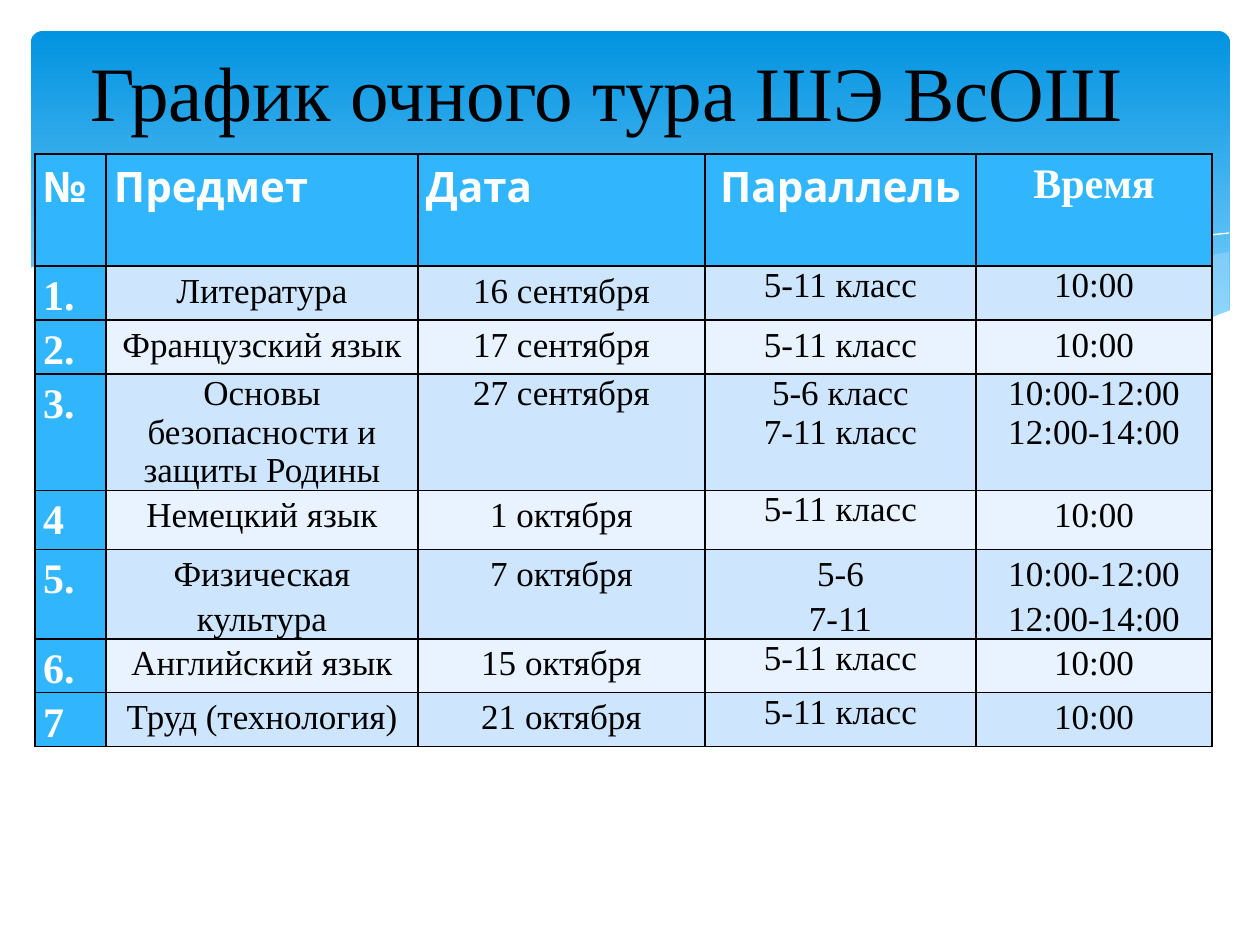
from lxml.etree import SubElement
from pptx import Presentation
from pptx.dml.color import RGBColor
from pptx.enum.dml import MSO_THEME_COLOR as THEME
from pptx.enum.shapes import MSO_SHAPE as SHAPE
from pptx.enum.text import MSO_ANCHOR as ANCHOR, MSO_AUTO_SIZE as AUTO_SIZE, PP_ALIGN as ALIGN
from pptx.oxml.ns import qn
from pptx.util import Emu, Pt

SCALE = 914400 / 126
COLORS = {
    "black": "000000", "white": "FFFFFF", "accent": "31B6FD",
    "odd": "CEE5FE", "even": "E8F3FF", "wave": "C6E7FC",
    "sky_top": "0293E0", "sky_bottom": "83D3FE",
}
SERIF, SANS = "Times New Roman", "Cabin"

RIGHT_WAVE = [(1200, 20), (1149, 29), (1056, 49), (920, 81), (804, 102), (877, 111),
              (983, 118), (1070, 113), (1140, 100), (1200, 79)]
LONG_WAVE = [(1096, 112), (1026, 102), (905, 79), (764, 48), (670, 26), (587, 13),
             (500, 4), (426, 1), (331, 9), (427, 24), (537, 48), (684, 81),
             (790, 101), (898, 115), (1002, 118)]
LONG_CREST = [(360, 14), (416, 6), (495, 4), (587, 8), (672, 16), (772, 30),
              (887, 53), (1018, 84), (1114, 111)]
RIGHT_CREST = [(743, 92), (847, 64), (949, 40), (1062, 19), (1135, 8), (1200, 1)]
FRONT_WAVE = [(0, 37), (16, 29), (55, 16), (105, 6), (155, 1), (214, 0), (286, 3),
              (369, 13), (464, 29), (534, 45), (638, 69), (731, 88), (838, 106),
              (930, 115), (1008, 117), (1074, 112), (1130, 102), (1168, 91),
              (1202, 78), (1202, 183), (0, 183)]

COLUMNS = [71, 312, 287, 271, 236]
ROW_HEIGHTS = [112, 54, 54, 112, 59, 54, 54, 54]
HEADER = ["№", "Предмет", "Дата", "Параллель", "Время"]
ALL_GRADES = "5-11 класс"
SPLIT_TIME = "10:00-12:00\n12:00-14:00"
# Each row ends with the columns that keep single line spacing.
SCHEDULE = [
    ("1.", "Литература", "16 сентября", ALL_GRADES, "10:00", {3, 4}),
    ("2.", "Французский язык", "17 сентября", ALL_GRADES, "10:00", set()),
    ("3.", "Основы безопасности и защиты Родины", "27 сентября",
     "5-6 класс\n7-11 класс", SPLIT_TIME, {1, 2, 3, 4}),
    ("4", "Немецкий язык", "1 октября", ALL_GRADES, "10:00", {3}),
    ("5.", "Физическая культура", "7 октября", "5-6\n7-11", SPLIT_TIME, set()),
    ("6.", "Английский язык", "15 октября", ALL_GRADES, "10:00", {3}),
    ("7", "Труд (технология)", "21 октября", ALL_GRADES, "10:00", {3}),
]


def px(length):
    return Emu(round(length * SCALE))


def rgb(name):
    return RGBColor.from_string(COLORS[name])


def set_all(target, values):
    for name, value in values.items():
        setattr(target, name, value)


def format_font(font, name, size, color, bold=False):
    set_all(font, {"name": name, "size": Pt(size), "bold": bold})
    font.color.rgb = rgb(color)


def add_curve(page, box, points, closed):
    builder = page.shapes.build_freeform(*points[0], scale=SCALE)
    builder.add_line_segments(points[1:], close=closed)
    curve = builder.convert_to_shape(px(box[0]), px(box[1]))
    curve.shadow.inherit = False
    return curve


def add_wave(page, box, points, color, opacity=100):
    wave = add_curve(page, box, points, True)
    wave.fill.solid()
    wave.fill.fore_color.rgb = rgb(color)
    wave.line.fill.background()
    if opacity < 100:
        tint = wave.fill._xPr.find(qn("a:solidFill"))[0]
        SubElement(tint, qn("a:alpha"), val=str(opacity * 1000))


def add_crest(page, box, points):
    crest = add_curve(page, box, points, False)
    crest.fill.background()
    crest.line.color.rgb = rgb("white")
    crest.line.width = Pt(0)


def add_sky(page, box):
    sky = page.shapes.add_shape(SHAPE.ROUNDED_RECTANGLE, *map(px, box))
    sky.adjustments[0] = 0.034
    sky.shadow.inherit = False
    sky.line.fill.background()
    sky.fill.gradient()
    sky.fill.gradient_angle = 270
    for stop, color, position in zip(sky.fill.gradient_stops, ("sky_top", "sky_bottom"), (0, 0.9)):
        stop.color.theme_color = THEME.ACCENT_1
        stop.color.rgb = rgb(color)
        stop.position = position


def add_waves(page, box):
    add_wave(page, box, RIGHT_WAVE, "wave", 29)
    add_wave(page, box, LONG_WAVE, "wave", 40)
    add_crest(page, box, LONG_CREST)
    add_crest(page, box, RIGHT_CREST)
    add_wave(page, box, FRONT_WAVE, "white")


def place_title(page, box, text):
    """Fill the title placeholder and bring it in front of the background."""
    title = page.shapes.title
    set_all(title, dict(zip(("left", "top", "width", "height"), map(px, box))))
    frame = title.text_frame
    set_all(frame, {"text": text, "word_wrap": True, "auto_size": AUTO_SIZE.NONE,
                    "vertical_anchor": ANCHOR.MIDDLE})
    para = frame.paragraphs[0]
    para.alignment = ALIGN.CENTER
    para._p.get_or_add_pPr().set("indent", str(px(47)))
    format_font(para.runs[0].font, SERIF, 44, "black")
    page.shapes._spTree.append(title._element)


def add_borders(cell):
    properties = cell._tc.get_or_add_tcPr()
    for index, side in enumerate(("lnL", "lnR", "lnT", "lnB")):
        line = properties.makeelement(qn(f"a:{side}"), {"w": str(Pt(1))})
        SubElement(SubElement(line, qn("a:solidFill")), qn("a:srgbClr"), val=COLORS["black"])
        properties.insert(index, line)


def fill_cell(cell, text, fill, inset, alignment, spacing, font):
    set_all(cell, {"text": text, "margin_left": px(inset), "margin_right": px(inset),
                   "margin_top": 0, "margin_bottom": 0, "vertical_anchor": ANCHOR.TOP})
    cell.fill.solid()
    cell.fill.fore_color.rgb = rgb(fill)
    add_borders(cell)
    for para in cell.text_frame.paragraphs:
        set_all(para, {"alignment": alignment, "line_spacing": spacing})
        for span in para.runs:
            format_font(span.font, *font)


def add_schedule(page, box):
    table = page.shapes.add_table(len(SCHEDULE) + 1, len(COLUMNS), *map(px, box)).table
    set_all(table, {"first_row": False, "horz_banding": False})
    for column, width in zip(table.columns, COLUMNS):
        column.width = px(width)
    for row, height in zip(table.rows, ROW_HEIGHTS):
        row.height = px(height)
    for column, text in enumerate(HEADER):
        fill_cell(table.cell(0, column), text, "accent", 8,
                  ALIGN.JUSTIFY if column < 3 else ALIGN.CENTER, 1.15,
                  (SERIF if column == 4 else SANS, 24, "white", True))
    for row, (number, *texts, single) in enumerate(SCHEDULE, 1):
        fill_cell(table.cell(row, 0), number, "accent", 8, ALIGN.JUSTIFY, 1.15,
                  (SERIF, 24, "white", True))
        for column, text in enumerate(texts, 1):
            fill_cell(table.cell(row, column), text, "odd" if row % 2 else "even",
                      9 if column < 3 else 8, ALIGN.CENTER,
                      1.0 if column in single else 1.15, (SERIF, 20, "black"))


def main():
    deck = Presentation()
    set_all(deck, {"slide_width": px(1260), "slide_height": px(945)})
    page = deck.slides.add_slide(deck.slide_layouts[5])
    add_sky(page, (31, 31, 1199, 340))
    add_waves(page, (29, 232))
    place_title(page, (-15, 26, 1197, 129), "График очного тура ШЭ ВсОШ")
    add_schedule(page, (35, 154, sum(COLUMNS), sum(ROW_HEIGHTS)))
    deck.save("out.pptx")


if __name__ == "__main__":
    main()
